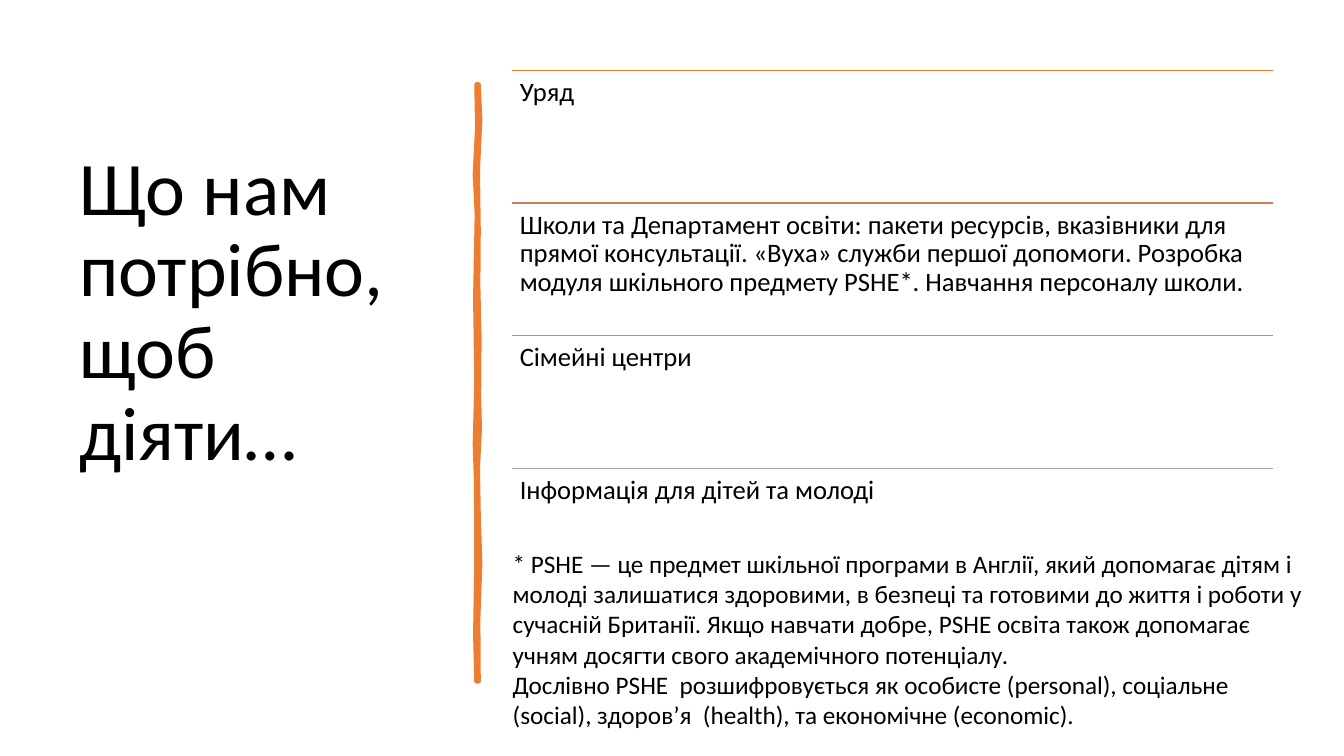
"""Build the slide on what is needed in order to act."""
from dataclasses import dataclass

from pptx import Presentation
from pptx import util as u
from pptx.dml.color import RGBColor
from pptx.enum import shapes, text
from pptx.oxml.ns import qn
from lxml import etree

FONT = "Calibri"
BLACK = "000000"
ORANGE = "ED7D31"
LIST_LEFT, LIST_TOP, LIST_WIDTH, ROW_HEIGHT = 12.9, 1.78, 19.18, 3.34


@dataclass
class TextBlock:
    paragraphs: list[str]
    left: float
    top: float
    width: float
    height: float
    size: float
    line_spacing: float = 1.0
    space_after: float = 0
    margin: float | None = None
    anchor: text.MSO_ANCHOR = text.MSO_ANCHOR.TOP
    auto_size: text.MSO_AUTO_SIZE = text.MSO_AUTO_SIZE.NONE


@dataclass
class Need:
    wording: str
    rule_color: str


NEEDS = [
    Need("Уряд", ORANGE),
    Need("Школи та Департамент освіти: пакети ресурсів, вказівники для прямої "
         "консультації. «Вуха» служби першої допомоги. Розробка модуля шкільного "
         "предмету PSHE*. Навчання персоналу школи.", "D17B5C"),
    Need("Сімейні центри", "B98A82"),
    Need("Інформація для дітей та молоді", "A5A5A5"),
]

TITLE = TextBlock(["Що нам потрібно, щоб діяти…"], 1.75, 1.78, 9.5, 12.22, 54,
                  line_spacing=0.9, anchor=text.MSO_ANCHOR.MIDDLE)

FOOTNOTE = TextBlock(
    ["* PSHE — це предмет шкільної програми в Англії, який допомагає дітям і молоді "
     "залишатися здоровими, в безпеці та готовими до життя і роботи у сучасній "
     "Британії. Якщо навчати добре, PSHE освіта також допомагає учням досягти свого "
     "академічного потенціалу.",
     "Дослівно PSHE  розшифровується як особисте (personal), соціальне (social), "
     "здоров’я  (health), та економічне (economic)."],
    12.67, 13.69, 20.57, 4.88, 18, auto_size=text.MSO_AUTO_SIZE.SHAPE_TO_FIT_TEXT)

STROKE_OUTLINE = [
    (12.06, 2.13), (12.1, 3), (12.04, 4.3), (12.06, 5.8), (12.05, 7.2),
    (12.08, 8.5), (12.07, 10), (12.09, 10.8), (12.04, 11.8), (12.06, 12.95),
    (12.1, 14.2), (12.05, 15.6), (12.06, 17.17), (12.01, 17.17), (11.98, 16),
    (12.01, 14.1), (12, 12.1), (11.97, 11.2), (12.01, 9.6), (11.98, 7.5),
    (12.02, 5.4), (11.97, 4.4), (12.03, 3.2), (12.01, 2.13),
]


def rgb(value: str) -> RGBColor:
    return RGBColor.from_string(value)


def add_text(page, block: TextBlock) -> None:
    box = page.shapes.add_textbox(u.Cm(block.left), u.Cm(block.top),
                                  u.Cm(block.width), u.Cm(block.height))
    frame = box.text_frame
    frame.text = "\n".join(block.paragraphs)
    frame.word_wrap = True
    frame.auto_size = block.auto_size
    frame.vertical_anchor = block.anchor
    if block.margin is not None:
        frame.margin_left = frame.margin_right = u.Cm(block.margin)
        frame.margin_top = frame.margin_bottom = u.Cm(block.margin)
    for para in frame.paragraphs:
        para.line_spacing = block.line_spacing
        para.space_after = u.Pt(block.space_after)
        for span in para.runs:
            span.font.name = FONT
            span.font.size = u.Pt(block.size)
            span.font.color.rgb = rgb(BLACK)


def add_rule(page, top: float, color: str) -> None:
    rule = page.shapes.add_connector(
        shapes.MSO_CONNECTOR.STRAIGHT, u.Cm(LIST_LEFT), u.Cm(top),
        u.Cm(LIST_LEFT + LIST_WIDTH), u.Cm(top))
    rule.line.color.rgb = rgb(color)
    rule.line.width = u.Pt(1)
    etree.SubElement(rule._element.spPr, qn("a:effectLst"))


def add_brush_stroke(page, outline: list[tuple[float, float]]) -> None:
    start, *others = [(u.Cm(x), u.Cm(y)) for x, y in outline]
    builder = page.shapes.build_freeform(*start)
    builder.add_line_segments(others, close=True)
    stroke = builder.convert_to_shape()
    stroke.shadow.inherit = False
    stroke.fill.solid()
    stroke.fill.fore_color.rgb = rgb(ORANGE)
    stroke.line.color.rgb = rgb(ORANGE)
    stroke.line.width = u.Pt(3.25)


def add_need(page, position: int, need: Need) -> None:
    top = LIST_TOP + position * ROW_HEIGHT
    add_rule(page, top, need.rule_color)
    add_text(page, TextBlock([need.wording], LIST_LEFT, top, LIST_WIDTH, ROW_HEIGHT,
                             19, line_spacing=0.9, space_after=6.65, margin=0.2))


def main() -> None:
    deck = Presentation()
    deck.slide_width, deck.slide_height = u.Cm(33.87), u.Cm(19.05)
    page = deck.slides.add_slide(deck.slide_layouts[6])
    add_text(page, TITLE)
    add_brush_stroke(page, STROKE_OUTLINE)
    for position, need in enumerate(NEEDS):
        add_need(page, position, need)
    add_text(page, FOOTNOTE)
    deck.save("out.pptx")


if __name__ == "__main__":
    main()
